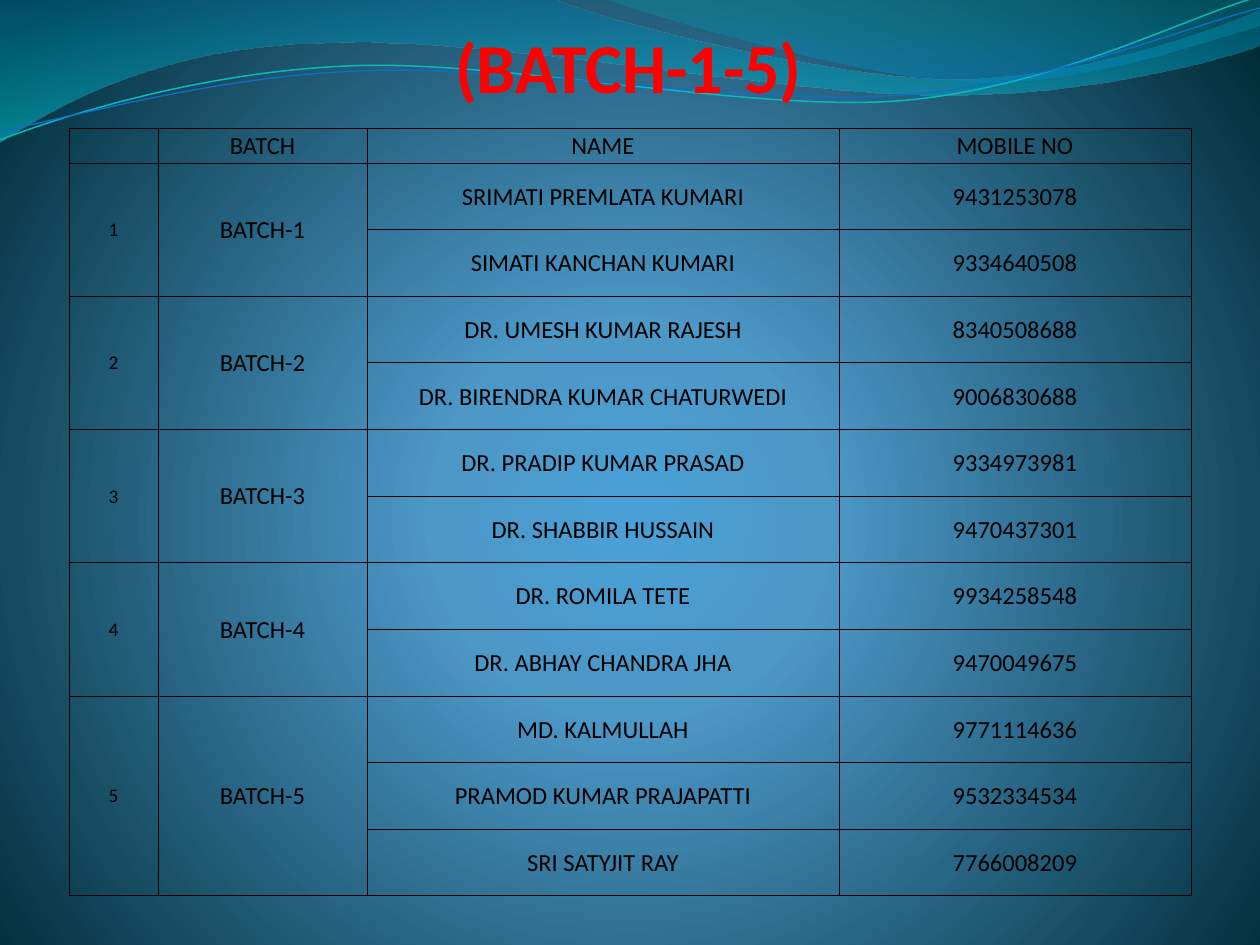
import math
from typing import NamedTuple

from lxml import etree
from pptx import Presentation
from pptx.dml.color import RGBColor
from pptx.enum import text
from pptx.oxml.ns import qn
from pptx.util import Pt

PX = 914400 / 126  # EMU in one px
FONT = "Calibri"
BLACK = "000000"
TILT = -2.7  # degrees, of the thin lines


class Stop(NamedTuple):
    pos: int
    tone: str
    alpha: int = 100


class Wave(NamedTuple):
    start: tuple
    steps: list  # two numbers: a line; six numbers: a Bezier curve
    stops: tuple = ()
    tone: str = ""
    width: float = 0
    hub: tuple = ()  # centre of the tilt


class Batch(NamedTuple):
    name: str
    staff: list  # (name, mobile number)


WAVES = [
    Wave((0, 0), [
        (554, -1), (600, 21, 837, 79, 955, 79), (1075, 79, 1207, 33, 1260, 11),
        (1261, 45), (1239, 55, 1096, 96, 940, 95), (784, 95, 481, 35, 324, 43),
        (163, 45, 58, 105, -1, 142), (0, 0),
    ], (Stop(0, "0074A1", 45), Stop(100, "00C6CF", 55))),
    Wave((604, -1), [
        (642, 14, 859, 78, 969, 82), (1079, 87, 1211, 40, 1260, 26), (1260, 0),
        (604, -1),
    ], (Stop(0, "00A1A9", 30), Stop(80, "008BBF", 45))),
    Wave((0, 140), [
        (60, 117, 199, 72, 349, 66), (498, 59, 747, 112, 898, 101),
        (1049, 89, 1182, 19, 1257, -3),
    ], tone="0AB8BF", width=0.85, hub=(629, 72)),
    Wave((0, 131), [
        (59, 121, 207, 77, 357, 71), (508, 64, 752, 106, 903, 95),
        (1053, 84, 1187, 26, 1260, 8),
    ], tone="0F6FC6", width=0.75, hub=(629, 74)),
]

HEADS = ["", "BATCH", "NAME", "MOBILE NO"]
COLS = [89, 209, 472, 352]
HEAD_H, BODY_H = 35, 733
BATCHES = [
    Batch("BATCH-1", [("SRIMATI PREMLATA KUMARI", "9431253078"),
                      ("SIMATI KANCHAN KUMARI", "9334640508")]),
    Batch("BATCH-2", [("DR. UMESH KUMAR RAJESH", "8340508688"),
                      ("DR. BIRENDRA KUMAR CHATURWEDI", "9006830688")]),
    Batch("BATCH-3", [("DR. PRADIP KUMAR PRASAD", "9334973981"),
                      ("DR. SHABBIR HUSSAIN", "9470437301")]),
    Batch("BATCH-4", [("DR. ROMILA TETE", "9934258548"),
                      ("DR. ABHAY CHANDRA JHA", "9470049675")]),
    Batch("BATCH-5", [("MD. KALMULLAH", "9771114636"),
                      ("PRAMOD KUMAR PRAJAPATTI", "9532334534"),
                      ("SRI SATYJIT RAY", "7766008209")]),
]


def emu(px: float) -> int:
    return round(px * PX)


def color(tone: str) -> RGBColor:
    return RGBColor.from_string(tone)


def node(parent, tag: str, **attrs):
    return etree.SubElement(parent, qn(tag), {k: str(v) for k, v in attrs.items()})


def shade(fill, root, stops: tuple):
    """Give a fill these stops; return the gradient for its direction."""
    fill.gradient()
    grad = next(root.iter(qn("a:gradFill")))
    for child in list(grad):
        grad.remove(child)
    items = node(grad, "a:gsLst")
    for stop in stops:
        mark = node(items, "a:gs", pos=stop.pos * 1000)
        tint = node(mark, "a:srgbClr", val=stop.tone)
        if stop.alpha < 100:
            node(tint, "a:alpha", val=stop.alpha * 1000)
    return grad


def level(spot: tuple, hub: tuple) -> tuple:
    """Undo the tilt of a point, which the shape's rotation adds again."""
    if not hub:
        return emu(spot[0]), emu(spot[1])
    turn = math.radians(-TILT)
    dx, dy = spot[0] - hub[0], spot[1] - hub[1]
    return (emu(hub[0] + dx * math.cos(turn) - dy * math.sin(turn)),
            emu(hub[1] + dx * math.sin(turn) + dy * math.cos(turn)))


def bend(shape, steps: list) -> None:
    """Join each three segments of a curve step into one Bezier."""
    lines = iter(list(shape.element.iter(qn("a:lnTo"))))
    for step in steps:
        part = [next(lines) for _ in range(len(step) // 2)]
        if len(part) == 3:
            curve = etree.Element(qn("a:cubicBezTo"))
            part[0].addprevious(curve)
            for line in part:
                curve.append(line[0])
                line.getparent().remove(line)


def draw_wave(slide, wave: Wave) -> None:
    spots = [level(step[i:i + 2], wave.hub)
             for step in wave.steps for i in range(0, len(step), 2)]
    pen = slide.shapes.build_freeform(*level(wave.start, wave.hub))
    pen.add_line_segments(spots, close=bool(wave.stops))
    shape = pen.convert_to_shape()
    bend(shape, wave.steps)
    shape.shadow.inherit = False
    if wave.stops:
        grad = shade(shape.fill, shape.element, wave.stops)
        node(grad, "a:lin", ang=5400000, scaled=1)
        shape.line.fill.background()
    else:
        shape.rotation = TILT
        shape.fill.background()
        shape.line.color.rgb = color(wave.tone)
        shape.line.width = Pt(wave.width)


def write(para, words: str, size: int, tone: str, bold: bool = False) -> None:
    para.alignment = text.PP_ALIGN.CENTER
    run = para.add_run()
    run.text = words
    run.font.name, run.font.size, run.font.bold = FONT, Pt(size), bold
    run.font.color.rgb = color(tone)


def draw_title(slide, words: str) -> None:
    box = slide.shapes.add_textbox(emu(94), emu(20), emu(1071), emu(88))
    frame = box.text_frame
    frame.word_wrap = True
    frame.vertical_anchor = text.MSO_ANCHOR.BOTTOM
    frame.margin_left = frame.margin_top = frame.margin_bottom = 0
    frame.margin_right = emu(2)
    write(frame.paragraphs[0], words, 40, "FF0000", True)


def style(cell) -> None:
    cell.margin_left = cell.margin_right = cell.margin_top = emu(1)
    cell.margin_bottom = 0
    cell.vertical_anchor = text.MSO_ANCHOR.MIDDLE
    props = cell._tc.get_or_add_tcPr()
    for side in "LRTB":
        edge = node(props, f"a:ln{side}", w=Pt(0.5))
        node(node(edge, "a:solidFill"), "a:srgbClr", val=BLACK)
    cell.fill.background()


def put(cell, words: str, size: int = 14) -> None:
    para = cell.text_frame.paragraphs[0]
    if words:
        write(para, words, size, BLACK)
    else:
        node(para._p, "a:endParaRPr", sz=size * 100)


def draw_table(slide) -> None:
    count = sum(len(batch.staff) for batch in BATCHES)
    table = slide.shapes.add_table(count + 1, len(COLS), emu(69), emu(128),
                                   emu(sum(COLS)), emu(HEAD_H + BODY_H)).table
    table.first_row = table.horz_banding = False
    for col, width in zip(table.columns, COLS):
        col.width = emu(width)
    for i, row in enumerate(table.rows):
        row.height = emu(BODY_H / count if i else HEAD_H)
    for cell in table.iter_cells():
        style(cell)
    for col, head in enumerate(HEADS):
        put(table.cell(0, col), head)
    top = 1
    for num, batch in enumerate(BATCHES, 1):
        last = top + len(batch.staff) - 1
        for col, words, size in ((0, str(num), 11), (1, batch.name, 14)):
            table.cell(top, col).merge(table.cell(last, col))
            put(table.cell(top, col), words, size)
        for row, pair in enumerate(batch.staff, top):
            for col, words in enumerate(pair, 2):
                put(table.cell(row, col), words)
        top = last + 1


def main() -> None:
    deck = Presentation()
    deck.slide_width, deck.slide_height = emu(1260), emu(945)
    slide = deck.slides.add_slide(deck.slide_layouts[6])
    # Background glow
    stops = (Stop(0, "4AA0D6"), Stop(25, "4C98C7"), Stop(100, "002C38"))
    glow = node(shade(slide.background.fill, slide.element, stops),
                "a:path", path="circle")
    node(glow, "a:fillToRect", l=10000, t=110000, r=10000, b=100000)
    # Waves along the top
    for wave in WAVES:
        draw_wave(slide, wave)
    # Title and list of batches
    draw_title(slide, "(BATCH-1-5)")
    draw_table(slide)
    deck.save("out.pptx")


if __name__ == "__main__":
    main()
